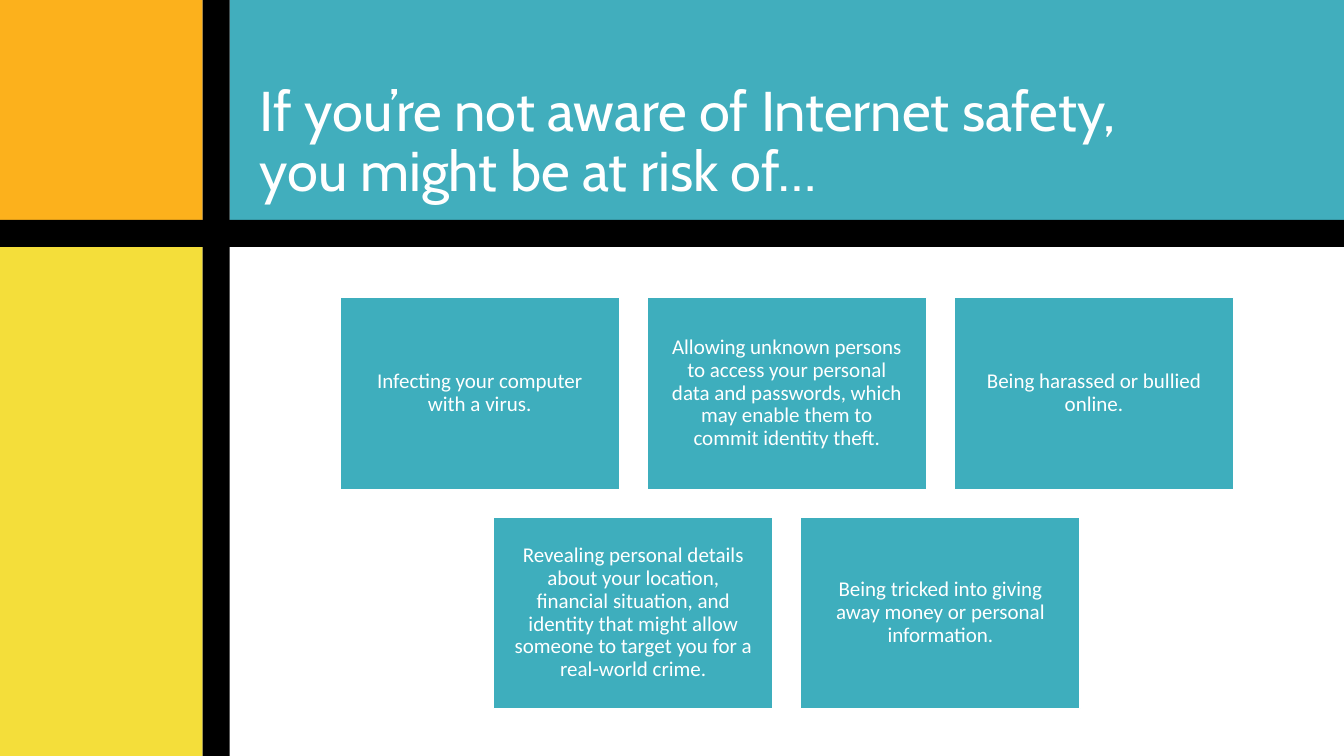
from pptx import Presentation
from pptx.dml.color import RGBColor
from pptx.enum import shapes, text
from pptx.util import Cm, Pt

BANNER_TEAL = RGBColor(0x41, 0xAE, 0xBD)
CARD_TEAL = RGBColor(0x3E, 0xAE, 0xBD)
ORANGE = RGBColor(0xFC, 0xB1, 0x1C)
YELLOW = RGBColor(0xF4, 0xDE, 0x3A)
BLACK = RGBColor(0, 0, 0)
WHITE = RGBColor(0xFF, 0xFF, 0xFF)

# All lengths below are in centimetres.
SLIDE_W, SLIDE_H = 33.87, 19.05
BAR = 0.68
SIDE_W, BANNER_H = 5.11, 5.54
MAIN_LEFT, MAIN_TOP = SIDE_W + BAR, BANNER_H + BAR

CARD_W, CARD_H, CARD_GAP = 7.04, 4.83, 0.7
CARDS_CENTER, CARDS_TOP = 19.83, 7.5

HEADING = ("If you’re not aware of Internet safety,", "you might be at risk of…")
RISK_ROWS = [
    [
        "Infecting your computer with a virus.",
        "Allowing unknown persons to access your personal data and passwords, "
        "which may enable them to commit identity theft.",
        "Being harassed or bullied online.",
    ],
    [
        "Revealing personal details about your location, financial situation, "
        "and identity that might allow someone to target you for a real-world crime.",
        "Being tricked into giving away money or personal information.",
    ],
]


def add_panel(slide, left, top, width, height, color):
    panel = slide.shapes.add_shape(
        shapes.MSO_SHAPE.RECTANGLE, Cm(left), Cm(top), Cm(width), Cm(height))
    panel.shadow.inherit = False
    panel.fill.solid()
    panel.fill.fore_color.rgb = color
    panel.line.fill.background()
    return panel


def set_margins(frame, side, edge):
    frame.margin_left = frame.margin_right = Cm(side)
    frame.margin_top = frame.margin_bottom = Cm(edge)


def style_paragraph(paragraph, font_name, size, alignment):
    paragraph.alignment = alignment
    paragraph.line_spacing = 0.9
    paragraph.font.name = font_name
    paragraph.font.size = Pt(size)
    paragraph.font.color.rgb = WHITE


def add_frame(slide):
    """Draw the coloured panels and the black bars that divide them."""
    main_w = SLIDE_W - MAIN_LEFT
    add_panel(slide, MAIN_LEFT, 0, main_w, BANNER_H, BANNER_TEAL)
    add_panel(slide, 0, 0, SIDE_W, BANNER_H, ORANGE)
    add_panel(slide, 0, MAIN_TOP, SIDE_W, SLIDE_H - MAIN_TOP, YELLOW)
    add_panel(slide, 0, BANNER_H, SLIDE_W, BAR, BLACK)
    add_panel(slide, SIDE_W, 0, BAR, SLIDE_H, BLACK)


def add_risk_card(slide, left, top, risk):
    card = add_panel(slide, left, top, CARD_W, CARD_H, CARD_TEAL)
    card.line.color.rgb = WHITE
    card.line.width = Pt(1)
    frame = card.text_frame
    frame.word_wrap = True
    frame.vertical_anchor = text.MSO_ANCHOR.MIDDLE
    set_margins(frame, 0.51, 0.25)
    frame.text = risk
    style_paragraph(frame.paragraphs[0], "Calibri", 15, text.PP_ALIGN.CENTER)


def add_risk_cards(slide):
    """Lay out each row of cards around the same centre."""
    for row, risks in enumerate(RISK_ROWS):
        row_w = len(risks) * (CARD_W + CARD_GAP) - CARD_GAP
        top = CARDS_TOP + row * (CARD_H + CARD_GAP)
        for column, risk in enumerate(risks):
            left = CARDS_CENTER - row_w / 2 + column * (CARD_W + CARD_GAP)
            add_risk_card(slide, left, top, risk)


def fill_heading(slide):
    heading = slide.shapes.title
    slide.shapes.element.append(heading.element)  # bring in front of the banner
    heading.left, heading.top = Cm(MAIN_LEFT), Cm(1.68)
    heading.width, heading.height = Cm(27.05), Cm(3.84)
    frame = heading.text_frame
    frame.word_wrap = True
    frame.auto_size = text.MSO_AUTO_SIZE.NONE
    frame.vertical_anchor = text.MSO_ANCHOR.BOTTOM
    set_margins(frame, 0.76, 0.38)
    paragraph = frame.paragraphs[0]
    first_line, second_line = HEADING
    paragraph.add_run().text = first_line
    paragraph.add_line_break()
    paragraph.add_run().text = second_line
    style_paragraph(paragraph, "Cabin", 40, text.PP_ALIGN.LEFT)


def main():
    presentation = Presentation()
    presentation.slide_width, presentation.slide_height = Cm(SLIDE_W), Cm(SLIDE_H)
    title_only = presentation.slide_layouts[5]
    slide = presentation.slides.add_slide(title_only)
    add_frame(slide)
    add_risk_cards(slide)
    fill_heading(slide)
    presentation.save("out.pptx")


if __name__ == "__main__":
    main()
